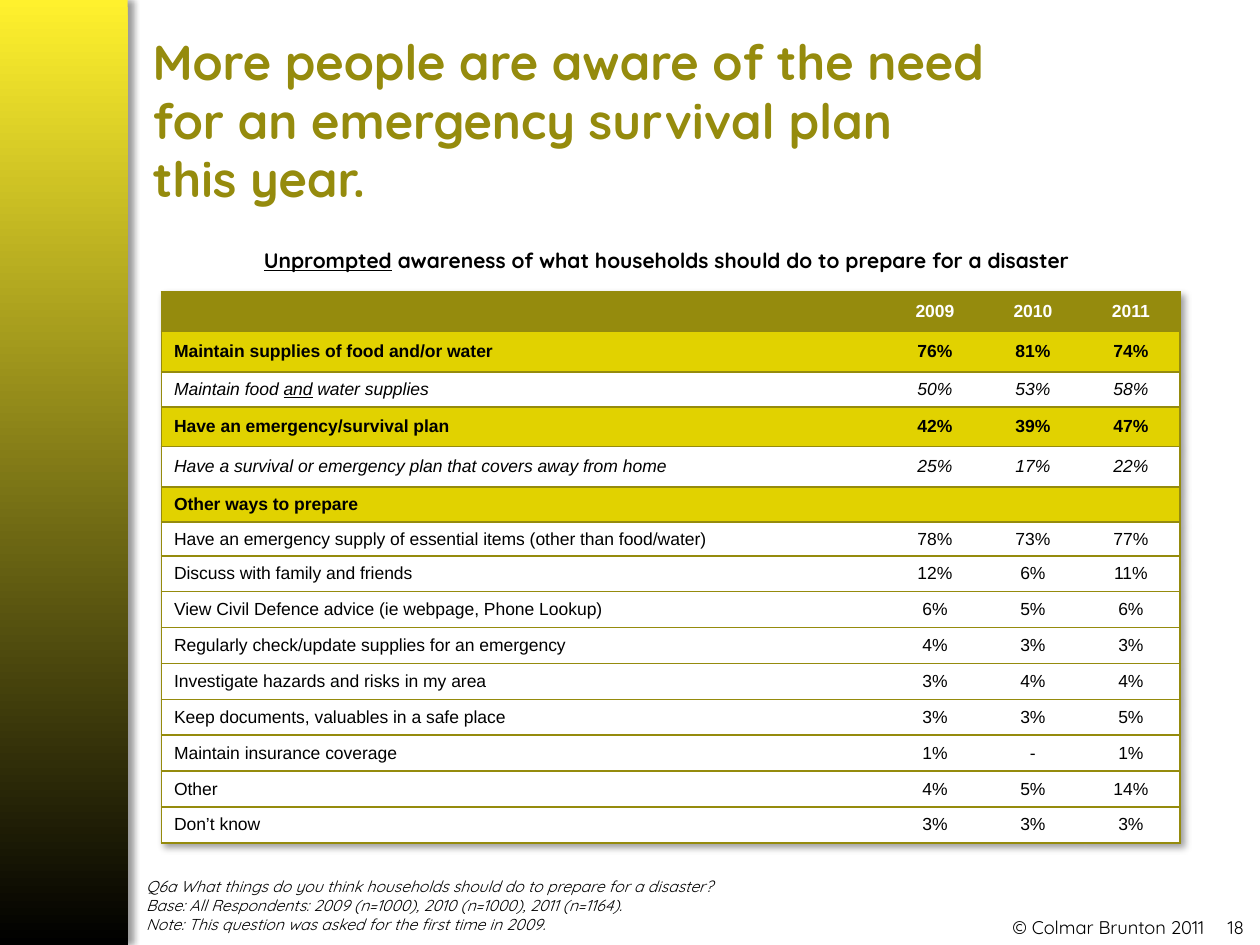
from lxml import etree
from pptx import Presentation
from pptx import util as u
from pptx.dml.color import RGBColor
from pptx.enum import shapes, text
from pptx.oxml import parse_xml
from pptx.oxml.ns import nsdecls, qn

Pt = u.Pt
COLORS = {
    "olive": "958B0D",
    "yellow": "E1D200",
    "bright": "FFF12D",
    "black": "000000",
    "white": "FFFFFF",
}
ALIGN = text.PP_ALIGN
ANCHOR = text.MSO_ANCHOR
NO_STYLE = "{2D5ABB26-0587-4C30-8999-92F81FD0307C}"

TITLE_FORMAT = {"name": "Quicksand", "size": Pt(28), "bold": True, "color": "olive"}
HEADING_FORMAT = {"name": "Quicksand", "size": Pt(12), "bold": True, "color": "black"}
NOTE_FORMAT = {"name": "Quicksand", "size": Pt(9), "italic": True, "color": "black"}
FOOTER_FORMAT = {"name": "Quicksand", "size": Pt(10.5), "color": "black"}
CELL_FORMAT = {"name": "Arial", "size": Pt(10), "color": "black"}

UNDERLINE = {"underline": True}
# Each kind of table row: cell fill and what differs from CELL_FORMAT
ROW_KINDS = {
    "header": ("olive", {"bold": True, "color": "white"}),
    "group": ("yellow", {"bold": True}),
    "detail": ("white", {"italic": True}),
    "item": ("white", {}),
}
COLUMN_WIDTHS = [414, 56, 56, 56]
ROWS = [
    ("header", 22.5, "", "2009", "2010", "2011"),
    ("group", 23, "Maintain supplies of food and/or water", "76%", "81%", "74%"),
    ("detail", 20.25,
     [("Maintain food ", {}), ("and", UNDERLINE), (" water supplies", {})],
     "50%", "53%", "58%"),
    ("group", 22.5, "Have an emergency/survival plan", "42%", "39%", "47%"),
    ("detail", 23, "Have a survival or emergency plan that covers away from home",
     "25%", "17%", "22%"),
    ("group", 20.25, "Other ways to prepare"),
    ("item", 18.75, "Have an emergency supply of essential items (other than food/water)",
     "78%", "73%", "77%"),
    ("item", 20.5, "Discuss with family and friends", "12%", "6%", "11%"),
    ("item", 20.5, "View Civil Defence advice (ie webpage, Phone Lookup)", "6%", "5%", "6%"),
    ("item", 20.5, "Regularly check/update supplies for an emergency", "4%", "3%", "3%"),
    ("item", 20.5, "Investigate hazards and risks in my area", "3%", "4%", "4%"),
    ("item", 20.5, "Keep documents, valuables in a safe place", "3%", "3%", "5%"),
    ("item", 20.5, "Maintain insurance coverage", "1%", "-", "1%"),
    ("item", 20.5, "Other", "4%", "5%", "14%"),
    ("item", 20.5, "Don’t know", "3%", "3%", "3%"),
]


def rgb(name):
    return RGBColor.from_string(COLORS[name])


def apply_font(font, format_values):
    for attribute, value in format_values.items():
        if attribute == "color":
            font.color.rgb = rgb(value)
        else:
            setattr(font, attribute, value)


def write_paragraph(paragraph, content, format_values, alignment=ALIGN.LEFT):
    """Content is a string or a list of (text, extra format); a newline breaks the line."""
    paragraph.alignment = alignment
    paragraph.space_before = Pt(0)
    runs = [(content, {})] if isinstance(content, str) else content
    for run_text, extra in runs:
        for number, line in enumerate(run_text.split("\n")):
            if number:
                paragraph.add_line_break()
            run = paragraph.add_run()
            run.text = line
            apply_font(run.font, {**format_values, **extra})


def add_text(slide, box, contents, format_values, alignment=ALIGN.LEFT):
    frame = slide.shapes.add_textbox(*map(Pt, box)).text_frame
    frame.word_wrap = True
    for number, content in enumerate(contents):
        paragraph = frame.add_paragraph() if number else frame.paragraphs[0]
        write_paragraph(paragraph, content, format_values, alignment)


def fill_title(slide, box, content):
    title = slide.shapes.title
    title.left, title.top, title.width, title.height = map(Pt, box)
    frame = title.text_frame
    frame.auto_size = text.MSO_AUTO_SIZE.NONE
    frame.vertical_anchor = ANCHOR.MIDDLE
    write_paragraph(frame.paragraphs[0], content, TITLE_FORMAT)


def shadow_effect(blur, distance, angle):
    return parse_xml(
        f'<a:effectLst {nsdecls("a")}><a:outerShdw blurRad="{Pt(blur)}" '
        f'dist="{Pt(distance)}" dir="{angle * 60000}" algn="tl" rotWithShape="0">'
        f'<a:srgbClr val="{COLORS["black"]}"><a:alpha val="40000"/></a:srgbClr>'
        '</a:outerShdw></a:effectLst>')


def add_side_band(slide, box):
    band = slide.shapes.add_shape(shapes.MSO_SHAPE.RECTANGLE, *map(Pt, box))
    band.line.fill.background()
    band.fill.gradient()
    band.fill.gradient_angle = 270
    for stop, position, color in zip(band.fill.gradient_stops, (0, 1), ("bright", "black")):
        stop.position = position
        stop.color.rgb = rgb(color)
    band._element.spPr.append(shadow_effect(4, 3, 0))


def set_borders(cell, sides):
    properties = cell._tc.get_or_add_tcPr()
    for number, side in enumerate(sides):
        line = etree.Element(qn(f"a:ln{side}"), w=str(Pt(1)))
        fill = etree.SubElement(line, qn("a:solidFill"))
        etree.SubElement(fill, qn("a:srgbClr"), val=COLORS["olive"])
        properties.insert(number, line)


def fill_row(table, index, kind, label, values):
    fill, extra = ROW_KINDS[kind]
    last = len(COLUMN_WIDTHS) - 1
    if not values:
        table.cell(index, 0).merge(table.cell(index, last))
    for column, cell in enumerate(table.rows[index].cells):
        cell.fill.solid()
        cell.fill.fore_color.rgb = rgb(fill)
        cell.vertical_anchor = ANCHOR.MIDDLE
        left = "L" if column == 0 else ""
        right = "R" if column == last or not values else ""
        set_borders(cell, left + right + "TB")
    for column, content in enumerate([label, *values]):
        paragraph = table.cell(index, column).text_frame.paragraphs[0]
        paragraph.font.size = CELL_FORMAT["size"]
        if content:
            write_paragraph(paragraph, content, {**CELL_FORMAT, **extra},
                            ALIGN.CENTER if column else ALIGN.LEFT)


def add_awareness_table(slide, left, top):
    height = sum(row[1] for row in ROWS)
    frame = slide.shapes.add_table(len(ROWS), len(COLUMN_WIDTHS), Pt(left), Pt(top),
                                   Pt(sum(COLUMN_WIDTHS)), Pt(height))
    table = frame.table
    table.horz_banding = False
    properties = table._tbl.tblPr
    style = properties.find(qn("a:tableStyleId"))
    style.text = NO_STYLE
    style.addprevious(shadow_effect(4, 3, 45))
    for column, width in zip(table.columns, COLUMN_WIDTHS):
        column.width = Pt(width)
    for index, (kind, row_height, label, *values) in enumerate(ROWS):
        table.rows[index].height = Pt(row_height)
        fill_row(table, index, kind, label, values)


def main():
    presentation = Presentation()
    presentation.slide_width, presentation.slide_height = Pt(720), Pt(540)
    slide = presentation.slides.add_slide(presentation.slide_layouts[5])
    add_text(slide, (462, 520, 256, 21), ["© Colmar Brunton 2011\u2003 18"],
             FOOTER_FORMAT, ALIGN.RIGHT)
    add_side_band(slide, (0, 0, 73, 540))
    fill_title(slide, (80, 6, 492, 124.5),
               "More people are aware of the need for an emergency survival plan this year.")
    add_awareness_table(slide, 92.25, 167)
    add_text(slide, (76.5, 497.5, 546, 40.5), [
        "Q6a What things do you think households should do to prepare for a disaster?",
        "Base: All Respondents: 2009 (n=1000), 2010 (n=1000), 2011 (n=1164).\n"
        "Note: This question was asked for the first time in 2009.",
    ], NOTE_FORMAT)
    add_text(slide, (124, 138, 514, 22), [[
        ("Unprompted", UNDERLINE),
        (" awareness of what households should do to prepare for a disaster", {}),
    ]], HEADING_FORMAT, ALIGN.CENTER)
    presentation.save("out.pptx")


if __name__ == "__main__":
    main()
